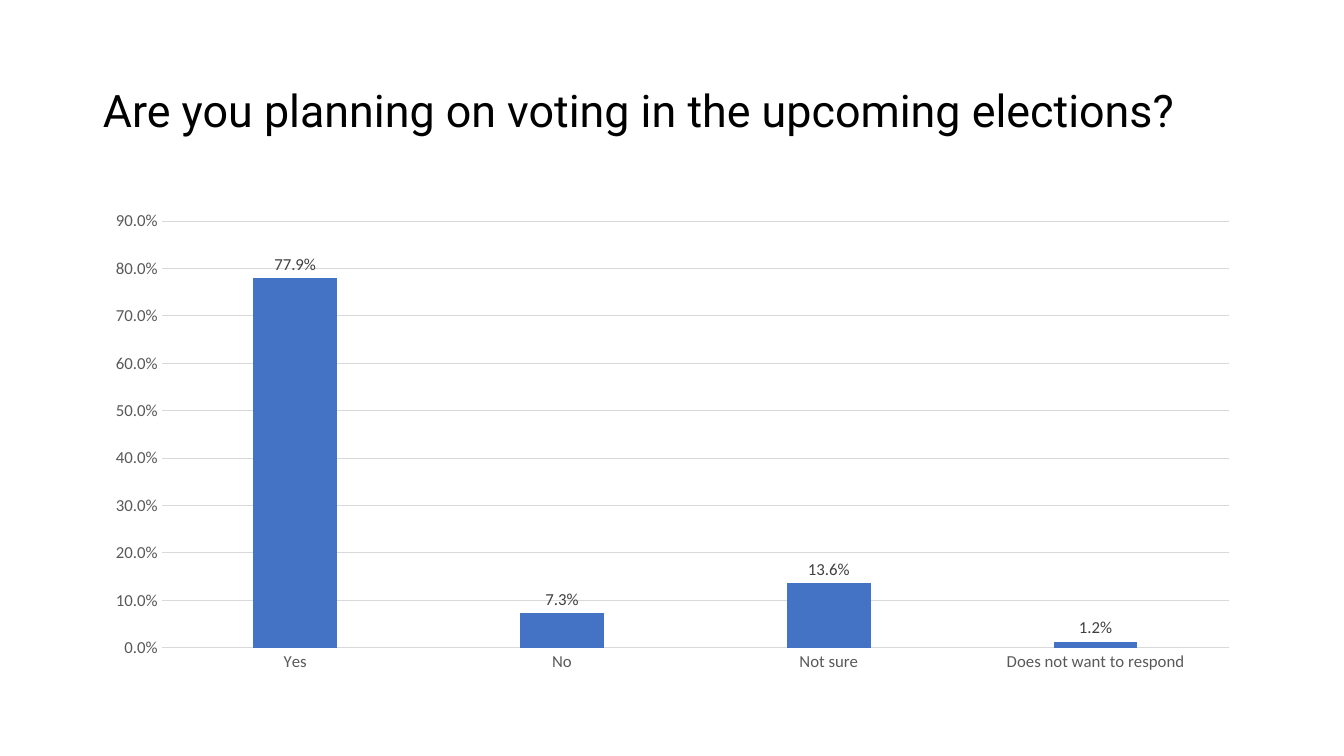
from pptx import Presentation
from pptx.chart.data import CategoryChartData
from pptx.dml.color import RGBColor
from pptx.enum.chart import XL_CHART_TYPE, XL_LABEL_POSITION, XL_TICK_MARK
from pptx.enum.text import MSO_ANCHOR, MSO_AUTO_SIZE, PP_ALIGN
from pptx.util import Inches, Pt

COLUMNS = XL_CHART_TYPE.COLUMN_CLUSTERED
OUTSIDE_END = XL_LABEL_POSITION.OUTSIDE_END
NO_TICK = XL_TICK_MARK.NONE
MIDDLE = MSO_ANCHOR.MIDDLE
NO_AUTOFIT = MSO_AUTO_SIZE.NONE
LEFT = PP_ALIGN.LEFT

TITLE_ONLY_LAYOUT = 5
MARGIN, CONTENT_WIDTH = 0.92, 11.5
PERCENT = "0.0%"
ANSWERS = {
    "Yes": 0.779,
    "No": 0.073,
    "Not sure": 0.136,
    "Does not want to respond": 0.012,
}


def color(value):
    """Turn a hex string into a colour."""
    return RGBColor.from_string(value)


def format_font(font, name, size, hex_color):
    """Set the typeface, size and colour of a font."""
    font.name = name
    font.size = Pt(size)
    font.color.rgb = color(hex_color)


def format_line(line):
    """Make a line thin and light grey."""
    line.color.rgb = color("D9D9D9")
    line.width = Pt(0.75)


def format_axis(axis):
    """Remove the tick marks of an axis and style its labels."""
    axis.major_tick_mark = NO_TICK
    axis.minor_tick_mark = NO_TICK
    format_font(axis.tick_labels.font, "Calibri", 12, "595959")


def add_title(slide, text):
    """Place and fill the title placeholder."""
    title = slide.shapes.title
    title.left, title.top = Inches(MARGIN), Inches(0.4)
    title.width, title.height = Inches(CONTENT_WIDTH), Inches(1.45)
    frame = title.text_frame
    frame.word_wrap = True
    frame.auto_size = NO_AUTOFIT
    frame.vertical_anchor = MIDDLE
    paragraph = frame.paragraphs[0]
    paragraph.alignment = LEFT
    paragraph.line_spacing = 0.9
    run = paragraph.add_run()
    run.text = text
    format_font(run.font, "Roboto", 32, "000000")


def add_answer_chart(slide, answers):
    """Add a column chart with the share of each answer."""
    data = CategoryChartData(number_format=PERCENT)
    data.categories = list(answers)
    data.add_series("Series 1", list(answers.values()))
    chart = slide.shapes.add_chart(
        COLUMNS, Inches(MARGIN), Inches(2),
        Inches(CONTENT_WIDTH), Inches(4.76), data,
    ).chart
    chart.has_title = False
    chart.has_legend = False
    format_font(chart.font, "Calibri", 10, "000000")

    category_axis, value_axis = chart.category_axis, chart.value_axis
    format_axis(category_axis)
    format_line(category_axis.format.line)
    format_axis(value_axis)
    value_axis.format.line.fill.background()
    format_line(value_axis.major_gridlines.format.line)
    value_axis.minimum_scale = 0
    value_axis.maximum_scale = 0.9
    value_axis.major_unit = 0.1
    value_axis.tick_labels.number_format = PERCENT
    value_axis.tick_labels.number_format_is_linked = False

    plot = chart.plots[0]
    plot.vary_by_categories = False
    plot.gap_width = 219
    plot.overlap = -27
    series = plot.series[0]
    series.invert_if_negative = False
    series.format.fill.solid()
    series.format.fill.fore_color.rgb = color("4472C4")
    labels = series.data_labels
    labels.show_value = True
    labels.number_format = PERCENT
    labels.number_format_is_linked = False
    labels.position = OUTSIDE_END
    format_font(labels.font, "Calibri", 12, "404040")


def main():
    """Build and save the slide."""
    presentation = Presentation()
    presentation.slide_width = Inches(13.33)
    presentation.slide_height = Inches(7.5)
    layout = presentation.slide_layouts[TITLE_ONLY_LAYOUT]
    slide = presentation.slides.add_slide(layout)
    add_title(slide, "Are you planning on voting in the upcoming elections?")
    add_answer_chart(slide, ANSWERS)
    presentation.save("out.pptx")


if __name__ == "__main__":
    main()
